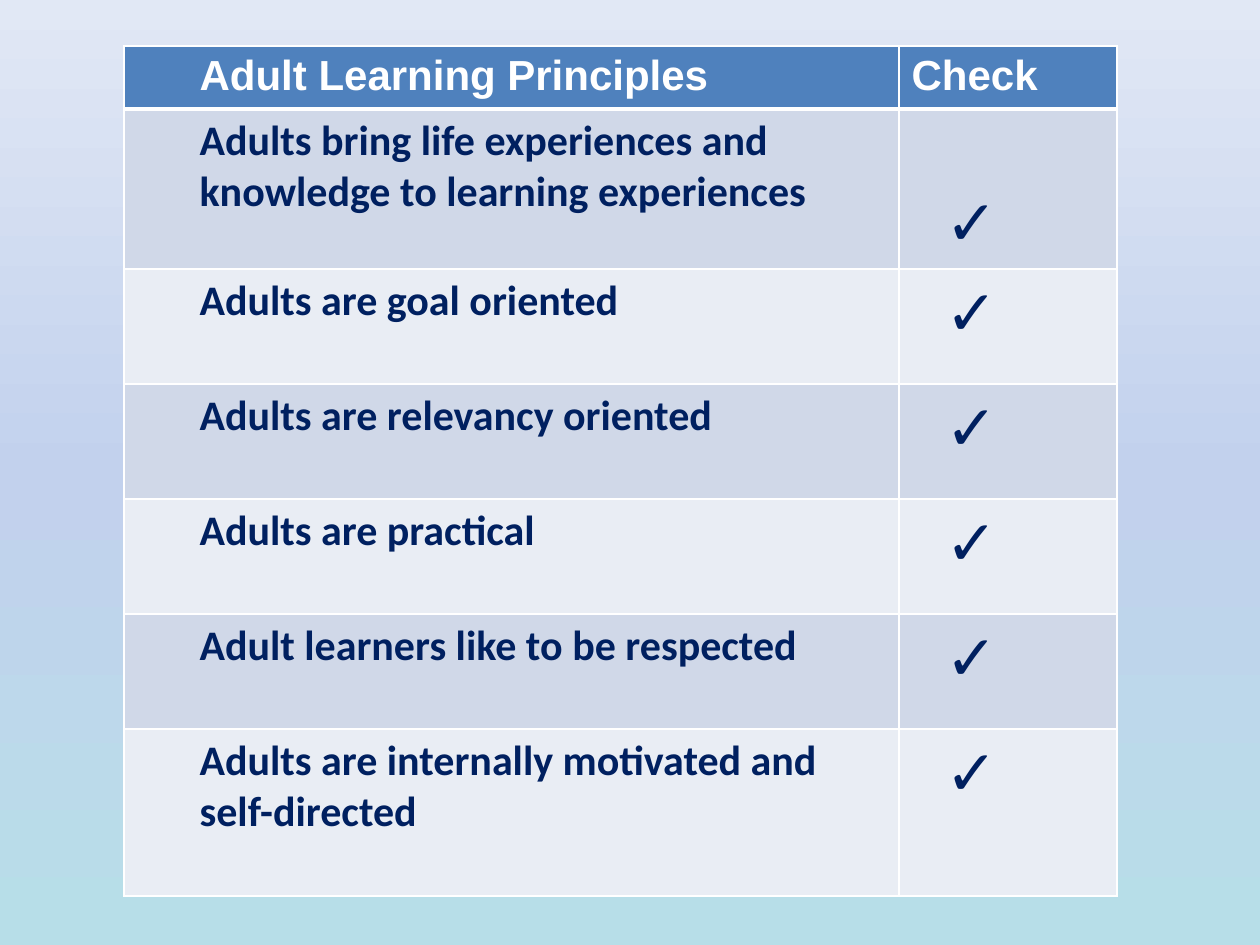
from copy import deepcopy

from pptx import Presentation
from pptx.dml.color import RGBColor
from pptx.enum.text import MSO_ANCHOR
from pptx.oxml import parse_xml
from pptx.oxml.ns import nsdecls, qn
from pptx.util import Pt

PX = 914400 / 126
WHITE = RGBColor(0xFF, 0xFF, 0xFF)
NAVY = RGBColor(0x00, 0x20, 0x60)
HEADER = RGBColor(0x4F, 0x81, 0xBD)
BANDS = [RGBColor(0xE9, 0xED, 0xF4), RGBColor(0xD0, 0xD8, 0xE8)]
SKY = [
    RGBColor(0xB7, 0xDE, 0xE8),
    RGBColor(0xC2, 0xD1, 0xED),
    RGBColor(0xE1, 0xE8, 0xF5),
]
COLS = [775, 218]
ROWS = [63, 160, 115, 115, 115, 115, 167]
PRINCIPLES = [
    ("Adult Learning Principles", 1),
    ("Adults bring life experiences and knowledge to learning experiences", 1),
    ("Adults are goal oriented", 2),
    ("Adults are relevancy oriented", 2),
    ("Adults are practical", 2),
    ("Adult learners like to be respected", 2),
    ("Adults are internally motivated and self-directed", 1),
]


def px(n):
    return round(n * PX)


def style_cell(cell, fill, bottom):
    tcPr = cell._tc.get_or_add_tcPr()
    for side, width in (("L", 1), ("R", 1), ("T", 1), ("B", bottom)):
        tcPr.append(parse_xml(
            f'<a:ln{side} {nsdecls("a")} w="{Pt(width)}"><a:solidFill>'
            f'<a:srgbClr val="{WHITE}"/></a:solidFill></a:ln{side}>'))
    cell.fill.solid()
    cell.fill.fore_color.rgb = fill


prs = Presentation()
prs.slide_width = px(1260)
prs.slide_height = px(945)
s = prs.slides.add_slide(prs.slide_layouts[6])

bg = s.background.fill
bg.gradient()
bg.gradient_angle = 90
gs = s.background._cSld.find(f".//{qn('a:gs')}")
gs.addnext(deepcopy(gs))
for i, (stop, color) in enumerate(zip(bg.gradient_stops, SKY)):
    stop.position = i / 2
    stop.color.rgb = color

table = s.shapes.add_table(
    len(ROWS), len(COLS), px(124), px(46), px(sum(COLS)), px(sum(ROWS))).table
for col, width in zip(table.columns, COLS):
    col.width = px(width)

for i, (height, (principle, level)) in enumerate(zip(ROWS, PRINCIPLES)):
    table.rows[i].height = px(height)
    for j, text in enumerate((principle, " " if i else "Check")):
        cell = table.cell(i, j)
        style_cell(cell, BANDS[i % 2] if i else HEADER, 1 if i else 3)
        p = cell.text_frame.paragraphs[0]
        r = p.add_run()
        r.text = text
        r.font.size = Pt(24)
        r.font.bold = True
        r.font.name = "Calibri" if i else "Arial"
        r.font.color.rgb = NAVY if i else WHITE
        pPr = p._p.get_or_add_pPr()
        if j == 0:
            p.level = level
            pPr.set("marL", str(px(63)))
            pPr.set("indent", "0")
        elif i:
            r.font.size = Pt(36)
            r.font.bold = False
            pPr.set("marL", str(px(82)))
            pPr.set("indent", str(px(-48)))
            pPr.append(parse_xml(f'<a:buFont {nsdecls("a")} typeface="Arial"/>'))
            pPr.append(parse_xml(f'<a:buChar {nsdecls("a")} char="✓"/>'))
            if i == 1:
                cell.vertical_anchor = MSO_ANCHOR.BOTTOM

prs.save("out.pptx")
